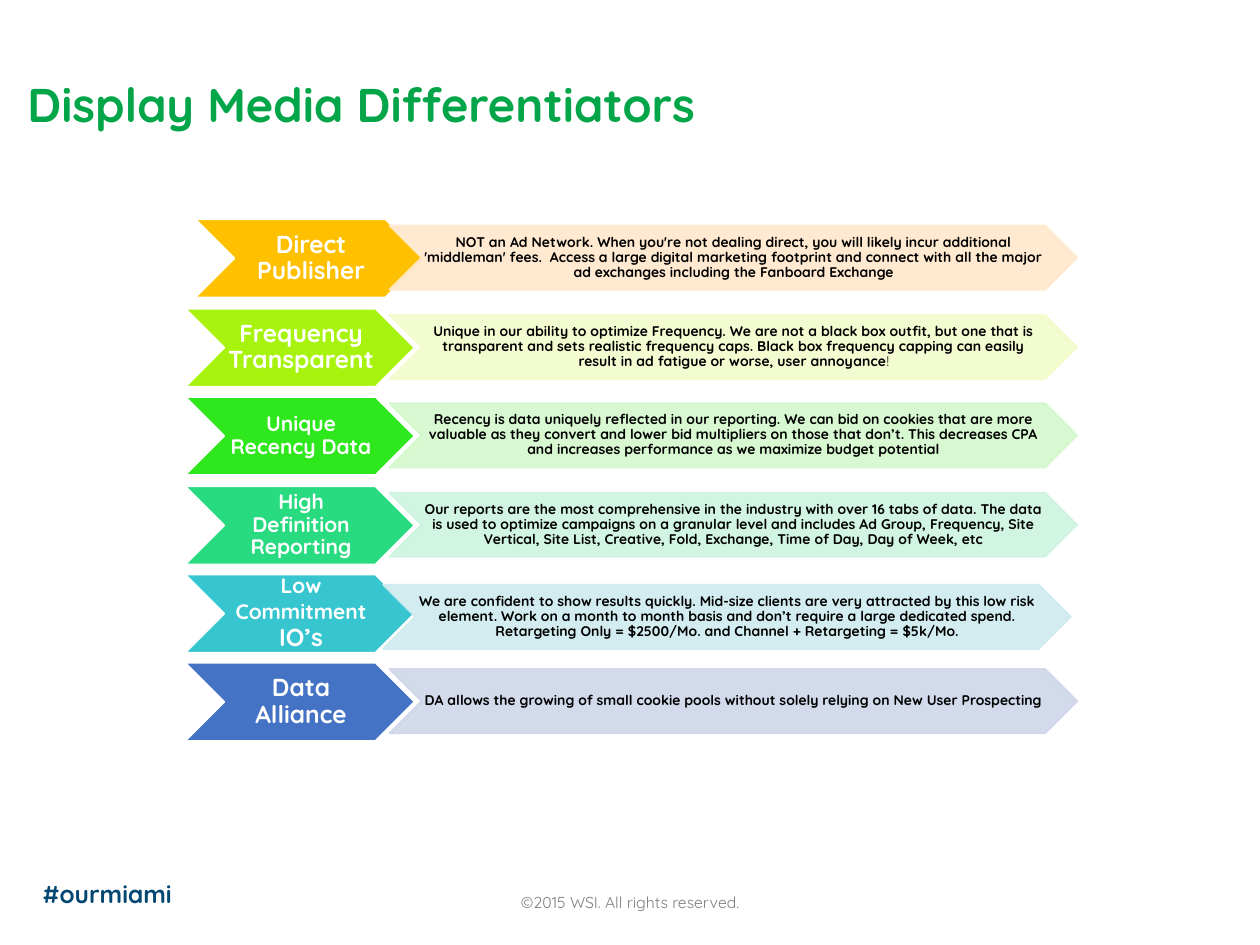
from dataclasses import dataclass

from lxml import etree
from pptx import Presentation
from pptx import util as u
from pptx.dml.color import RGBColor
from pptx.enum import shapes, text
from pptx.oxml.ns import qn

PX = 9144
FONT = "Quicksand"
COLORS = {
    "title": "03A549", "hashtag": "024772", "footer": "7F7F7F",
    "white": "FFFFFF", "black": "000000",
    "amber": "FFC000", "amber_tint": "FFE8CC",
    "lime": "A7F30E", "lime_tint": "F2FCCC",
    "green": "2EE71C", "green_tint": "D3F8CC",
    "mint": "29DB80", "mint_tint": "CDF4DF",
    "teal": "37C6CF", "teal_tint": "CEEBEF",
    "blue": "4472C4", "blue_tint": "CFD6EA",
}
ROW_TOP, ROW_STEP = 174.4, 70.4
LABEL_LEFT, LABEL_WIDTH, LABEL_HEIGHT = 147, 182, 62
BAND_LEFT, BAND_WIDTH, BAND_HEIGHT, BAND_DROP = 309, 546, 51, 5


@dataclass(frozen=True)
class Run:
    content: str
    size: int
    color: str
    bold: bool = True


@dataclass(frozen=True)
class Box:
    left: int
    top: int
    width: int
    height: int

    def inset(self, side: int) -> "Box":
        return Box(self.left + side, self.top, self.width - 2 * side, self.height)

    def emu(self) -> list[u.Emu]:
        return [u.Emu(value * PX) for value in (self.left, self.top, self.width, self.height)]


@dataclass(frozen=True)
class Differentiator:
    color: str
    label: list[Run]
    description: list[Run]
    label_shift: int = 0
    band_shift: tuple[int, int] = (0, 0)


def heading(content: str, size: int = 14) -> Run:
    return Run(content, size, "white")


def detail(content: str, bold: bool = True) -> Run:
    return Run(content, 8, "black", bold)


DIFFERENTIATORS = [
    Differentiator("amber", [heading("Direct Publisher")], [detail(
        "NOT an Ad Network. When you're not dealing direct, you will likely incur additional "
        "'middleman' fees.  Access a large digital marketing footprint and connect with all "
        "the major ad exchanges including the Fanboard Exchange")], label_shift=8),
    Differentiator("lime", [heading("Frequency Transparent")], [detail(
        "Unique in our ability to optimize Frequency. We are not a black box outfit, but one "
        "that is transparent and sets realistic frequency caps. Black box frequency capping "
        "can easily result in ad fatigue or worse, user annoyance"), detail("!", False)]),
    Differentiator("green", [heading("Unique Recency Data", 12)], [detail(
        "Recency is data uniquely reflected in our reporting. We can bid on cookies that are "
        "more valuable as they convert and lower bid multipliers on those that don’t. This "
        "decreases CPA and increases performance as we maximize budget potential")]),
    Differentiator("mint", [heading("High Definition Reporting", 12)], [detail(
        "Our reports are the most comprehensive in the industry with over 16 tabs of data. The "
        "data is used to optimize campaigns on a granular level and includes Ad Group, "
        "Frequency, Site Vertical, Site List, Creative, Fold, Exchange, Time of Day, Day of "
        "Week, etc")]),
    Differentiator("teal", [heading("Low Commitment", 12), heading(" IO’s")], [detail(
        "We are confident to show results quickly. Mid-size clients are very attracted by this "
        "low risk element. Work on a month to month basis and don’t require a large dedicated "
        "spend. Retargeting Only = $2500/Mo. and Channel + Retargeting = $5k/Mo.")],
        band_shift=(-5, 3)),
    Differentiator("blue", [heading("Data Alliance")], [detail(
        "DA allows the growing of small cookie pools without solely relying on New User "
        "Prospecting")]),
]


def rgb(name: str) -> RGBColor:
    return RGBColor.from_string(COLORS[name])


def add_text(slide, box: Box, runs: list[Run], align=text.PP_ALIGN.LEFT,
             anchor=text.MSO_ANCHOR.TOP, margins=(10, 5, 10, 5),
             spacing: float = 1.0) -> None:
    frame = slide.shapes.add_textbox(*box.emu()).text_frame
    frame.word_wrap = True
    frame.vertical_anchor = anchor
    (frame.margin_left, frame.margin_top,
     frame.margin_right, frame.margin_bottom) = [u.Emu(side * PX) for side in margins]
    paragraph = frame.paragraphs[0]
    paragraph.alignment = align
    paragraph.line_spacing = spacing
    for item in runs:
        run = paragraph.add_run()
        run.text = item.content
        run.font.name = FONT
        run.font.size = u.Pt(item.size)
        run.font.bold = item.bold
        run.font.color.rgb = rgb(item.color)


def add_chevron(slide, box: Box, fill: str, line: str, opacity: int = 100) -> None:
    shape = slide.shapes.add_shape(shapes.MSO_SHAPE.CHEVRON, *box.emu())
    shape.shadow.inherit = False
    shape.fill.solid()
    shape.fill.fore_color.rgb = rgb(fill)
    shape.line.color.rgb = rgb(line)
    shape.line.width = u.Pt(1)
    if opacity < 100:
        for color in shape._element.spPr.iter(qn("a:srgbClr")):
            etree.SubElement(color, qn("a:alpha")).set("val", str(opacity * 1000))


def add_differentiator(slide, index: int, row: Differentiator) -> None:
    top = ROW_TOP + index * ROW_STEP
    label = Box(LABEL_LEFT + row.label_shift, round(top), LABEL_WIDTH, LABEL_HEIGHT)
    shift_x, shift_y = row.band_shift
    band = Box(BAND_LEFT + shift_x, round(top + BAND_DROP + shift_y), BAND_WIDTH, BAND_HEIGHT)
    centred = dict(align=text.PP_ALIGN.CENTER, anchor=text.MSO_ANCHOR.MIDDLE, spacing=0.9)
    tint = f"{row.color}_tint"
    add_chevron(slide, label, row.color, "white")
    add_text(slide, label.inset(31), row.label, margins=(2, 1, 0, 1), **centred)
    add_chevron(slide, band, tint, tint, opacity=90)
    add_text(slide, band.inset(26), row.description, margins=(1, 1, 0, 1), **centred)


def main() -> None:
    presentation = Presentation()
    presentation.slide_width = u.Emu(1000 * PX)
    presentation.slide_height = u.Emu(750 * PX)
    slide = presentation.slides.add_slide(presentation.slide_layouts[6])
    add_text(slide, Box(390, 704, 220, 36),
             [Run("©2015 WSI. All rights reserved.", 9, "footer", False)],
             align=text.PP_ALIGN.CENTER)
    add_text(slide, Box(24, 693, 150, 34), [Run("#ourmiami", 14, "hashtag")])
    for index, row in enumerate(DIFFERENTIATORS):
        add_differentiator(slide, index, row)
    add_text(slide, Box(12, 15, 986, 95), [Run("Display Media Differentiators", 27, "title")],
             anchor=text.MSO_ANCHOR.BOTTOM, spacing=0.9)
    presentation.save("out.pptx")


if __name__ == "__main__":
    main()
